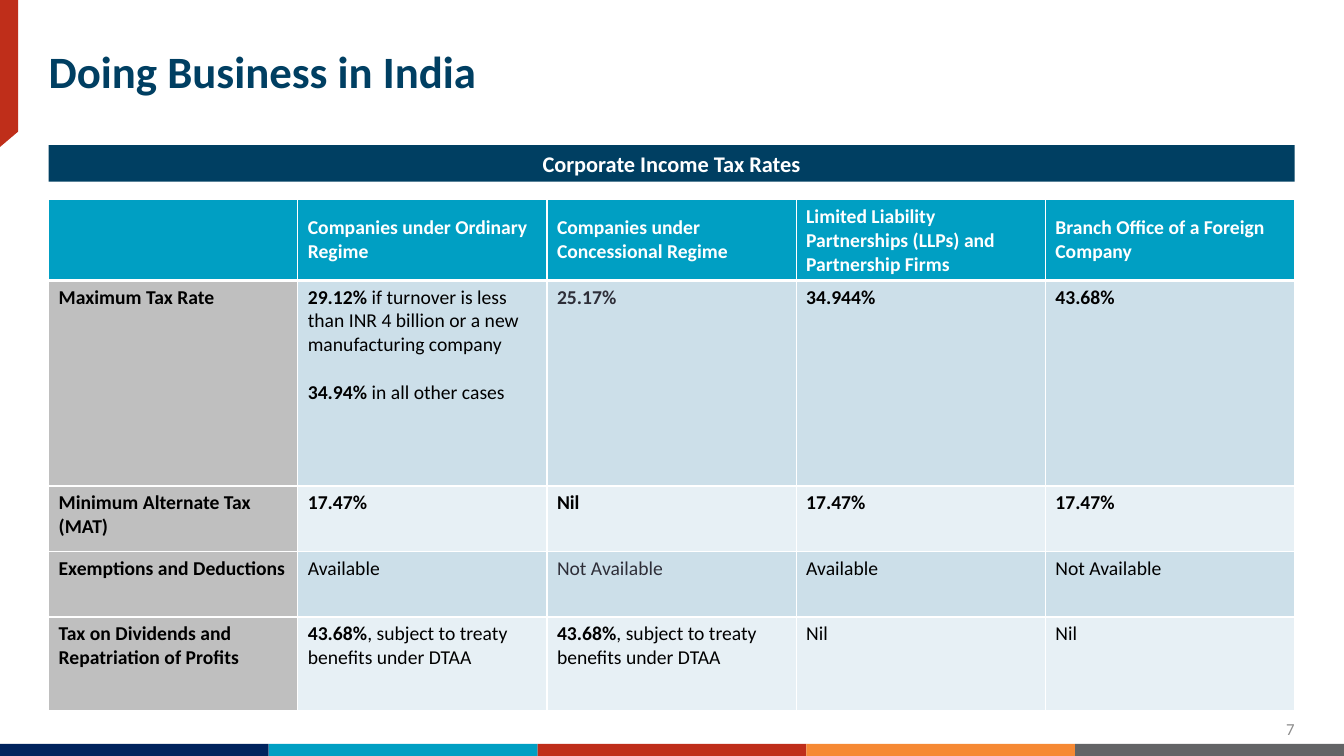
from dataclasses import dataclass
from itertools import accumulate

from lxml.etree import SubElement
from pptx import Presentation
from pptx.dml.color import RGBColor
from pptx.enum.shapes import MSO_SHAPE
from pptx.enum.text import MSO_ANCHOR, PP_ALIGN
from pptx.oxml.ns import qn
from pptx.util import Pt

TITLE = "Doing Business in India"
BANNER = "Corporate Income Tax Rates"
PAGE_NUMBER = "7"
REGIMES = [
    "",
    "Companies under Ordinary Regime",
    "Companies under Concessional Regime",
    "Limited Liability Partnerships (LLPs) and Partnership Firms",
    "Branch Office of a Foreign Company",
]
# Each cell is a list of paragraphs, each paragraph a (bold, regular) pair.
TAX_ROWS = [
    ("Maximum Tax Rate",
     [("29.12%", " if turnover is less than INR 4 billion or a new manufacturing company"),
      ("34.94% ", "in all other cases")],
     [("25.17%", "")], [("34.944%", "")], [("43.68%", "")]),
    ("Minimum Alternate Tax (MAT)",
     [("17.47%", "")], [("Nil", "")], [("17.47%", "")], [("17.47%", "")]),
    ("Exemptions and Deductions",
     [("", "Available")], [("", "Not Available")], [("", "Available")], [("", "Not Available")]),
    ("Tax on Dividends and Repatriation of Profits",
     [("43.68%", ", subject to treaty benefits under DTAA")],
     [("43.68%", ", subject to treaty benefits under DTAA")],
     [("", "Nil")], [("", "Nil")]),
]
SOFT_CELLS = {(1, 2), (3, 2)}  # (row, column) set in the softer text colour


@dataclass(frozen=True)
class Theme:
    font: str = "Calibri"
    navy: str = "003F62"
    cyan: str = "009FC3"
    red: str = "BF2E1A"
    white: str = "FFFFFF"
    black: str = "000000"
    soft: str = "2E2E38"
    page: str = "8C8C8C"
    label: str = "BFBFBF"
    bands: tuple = ("CCDFE9", "E7F0F5")
    footer: tuple = ("00235D", "009FC3", "BF2E1A", "F68933", "636466")
    title_size: int = 32
    banner_size: int = 16
    table_size: int = 14
    page_size: int = 12


THEME = Theme()
SLIDE_W, SLIDE_H = 960, 540
LEFT, CONTENT_W = 34.7, 890
FOOTER_H = 8.6
TABLE_TOP = 142.6
ROW_HEIGHTS = [56.1, 146.9, 46.8, 46.8, 66.7]
PARAGRAPH_GAP = 17


def paint(shape, color):
    shape.fill.solid()
    shape.fill.fore_color.rgb = RGBColor.from_string(color)
    shape.line.fill.background()
    shape.shadow.inherit = False


def style(run, size, color, bold=False):
    run.font.name = THEME.font
    run.font.size = Pt(size)
    run.font.bold = bold
    run.font.color.rgb = RGBColor.from_string(color)


def add_bar(slide, left, top, width, height, color):
    bar = slide.shapes.add_shape(MSO_SHAPE.RECTANGLE, Pt(left), Pt(top), Pt(width), Pt(height))
    paint(bar, color)
    return bar


def add_label(slide, box, text, size, color, bold, align, anchor):
    """Add a text box without insets."""
    frame = slide.shapes.add_textbox(*map(Pt, box)).text_frame
    frame.word_wrap = True
    frame.margin_left = frame.margin_right = frame.margin_top = frame.margin_bottom = 0
    frame.vertical_anchor = anchor
    frame.text = text
    paragraph = frame.paragraphs[0]
    paragraph.alignment = align
    style(paragraph.runs[0], size, color, bold)
    return paragraph


def add_corner_ribbon(slide):
    builder = slide.shapes.build_freeform(0, 0, scale=Pt(1))
    builder.add_line_segments([(0, 105), (13, 94.5), (13, 0)], close=True)
    paint(builder.convert_to_shape(), THEME.red)


def set_borders(cell, top, bottom):
    """Give a cell white edges, with the top and bottom widths in points."""
    properties = cell._tc.get_or_add_tcPr()
    for edge, width in (("L", 1), ("R", 1), ("T", top), ("B", bottom)):
        line = SubElement(properties, qn(f"a:ln{edge}"), w=str(Pt(width)))
        fill = SubElement(line, qn("a:solidFill"))
        SubElement(fill, qn("a:srgbClr"), val=THEME.white)


def fill_cell(cell, paragraphs, fill, color):
    cell.fill.solid()
    cell.fill.fore_color.rgb = RGBColor.from_string(fill)
    for index, parts in enumerate(paragraphs):
        if index:
            paragraph = cell.text_frame.add_paragraph()
            paragraph.space_before = Pt(PARAGRAPH_GAP)
        else:
            paragraph = cell.text_frame.paragraphs[0]
        for text, bold in zip(parts, (True, False)):
            if text:
                run = paragraph.add_run()
                run.text = text
                style(run, THEME.table_size, color, bold)


def add_tax_table(slide):
    grid = [[[(name, "")] for name in REGIMES]]
    grid += [[[(label, "")], *values] for label, *values in TAX_ROWS]
    table = slide.shapes.add_table(
        len(grid), len(REGIMES), Pt(LEFT), Pt(TABLE_TOP), Pt(CONTENT_W), Pt(sum(ROW_HEIGHTS))
    ).table
    table.first_row = table.horz_banding = False
    for column in table.columns:
        column.width = Pt(CONTENT_W / len(REGIMES))
    for r, (row, height) in enumerate(zip(grid, ROW_HEIGHTS)):
        table.rows[r].height = Pt(height)
        for c, paragraphs in enumerate(row):
            cell = table.cell(r, c)
            set_borders(cell, 3 if r == 1 else 1, 3 if r == 0 else 1)
            if r == 0:
                cell.vertical_anchor = MSO_ANCHOR.MIDDLE
                fill, color = THEME.cyan, THEME.white
            else:
                fill = THEME.label if c == 0 else THEME.bands[(r - 1) % 2]
                color = THEME.soft if (r, c) in SOFT_CELLS else THEME.black
            fill_cell(cell, paragraphs, fill, color)


def main():
    deck = Presentation()
    deck.slide_width, deck.slide_height = Pt(SLIDE_W), Pt(SLIDE_H)
    slide = deck.slides.add_slide(deck.slide_layouts[6])

    add_corner_ribbon(slide)
    band_w = SLIDE_W / len(THEME.footer)
    lefts = accumulate([band_w] * (len(THEME.footer) - 1), initial=0)
    for left, color in zip(lefts, THEME.footer):
        add_bar(slide, left, SLIDE_H - FOOTER_H, band_w, FOOTER_H, color)

    add_label(slide, (876, 513.4, 48.7, 14.4), PAGE_NUMBER, THEME.page_size, THEME.page,
              False, PP_ALIGN.RIGHT, MSO_ANCHOR.BOTTOM)
    title = add_label(slide, (LEFT, 35.3, 757, 34.6), TITLE, THEME.title_size, THEME.navy,
                      True, PP_ALIGN.LEFT, MSO_ANCHOR.TOP)
    title.line_spacing = 0.9

    banner = add_bar(slide, LEFT, 103.7, CONTENT_W, 26, THEME.navy).text_frame
    banner.text = BANNER
    banner.vertical_anchor = MSO_ANCHOR.MIDDLE
    banner.paragraphs[0].alignment = PP_ALIGN.CENTER
    style(banner.paragraphs[0].runs[0], THEME.banner_size, THEME.white, True)

    add_tax_table(slide)
    deck.save("out.pptx")


if __name__ == "__main__":
    main()
